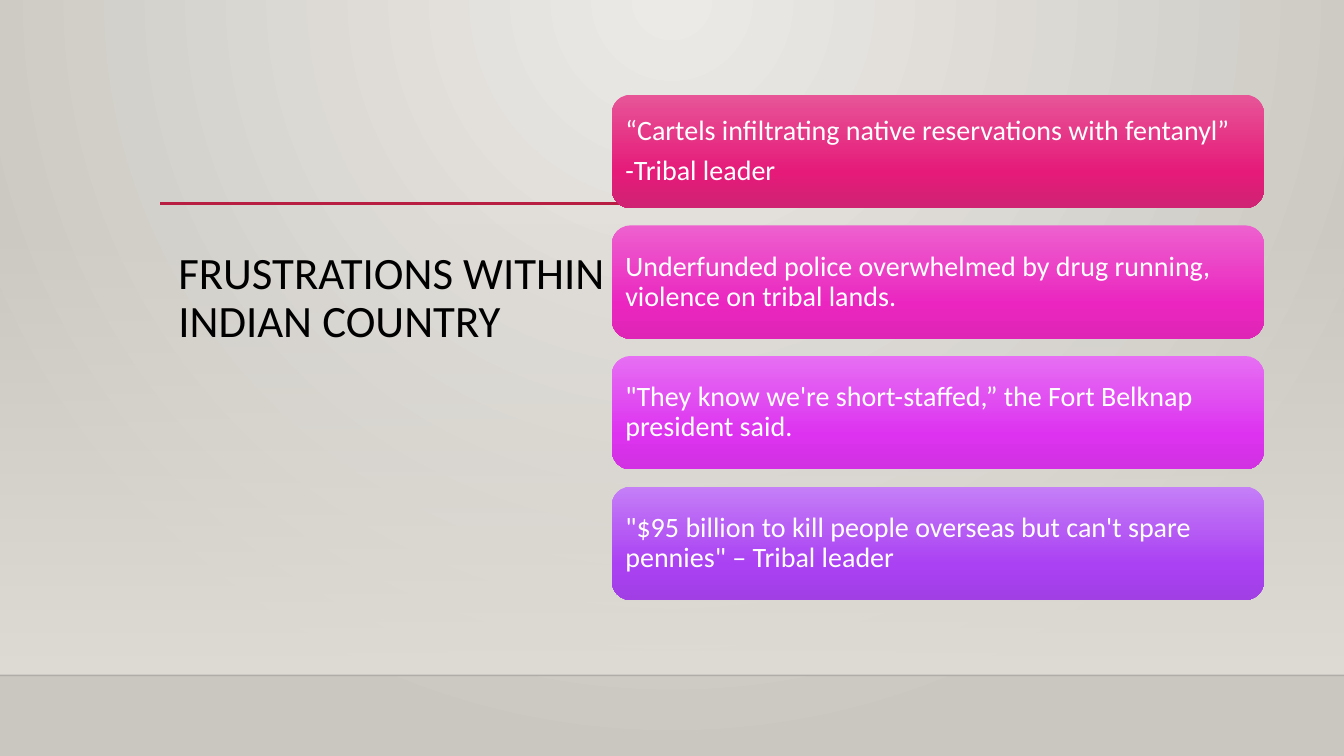
"""Build the slide on frustrations within Indian Country; lengths are percent of the slide."""
import dataclasses

import lxml.etree
import pptx
import pptx.dml.color
import pptx.dml.fill
import pptx.enum.shapes
import pptx.enum.text
import pptx.oxml
import pptx.oxml.ns
import pptx.shapes.autoshape
import pptx.slide
import pptx.text.text
import pptx.util

WIDE = pptx.util.Inches(13.33)
HIGH = pptx.util.Inches(7.5)
FONT = "Calibri"
LEFT, SPAN = 45.52, 48.53
TOP, TALL, STEP = 12.53, 15, 17.28
DOWN = '<a:lin ang="5400000" scaled="0"/>'
GLOW = '<a:path path="circle"><a:fillToRect l="43000" t="0" r="43000" b="100000"/></a:path>'


@dataclasses.dataclass(frozen=True)
class Stop:
    """One gradient stop."""
    place: int
    tint: str
    solid: int = 100


@dataclasses.dataclass(frozen=True)
class Card:
    """One rounded panel with its words and its three gradient tints."""
    lines: tuple[str, ...]
    tints: tuple[str, str, str]


@dataclasses.dataclass(frozen=True)
class Rule:
    """One level line across the slide."""
    start: float
    end: float
    row: float
    tint: str
    weight: float
    solid: int = 100


CARDS = (
    Card(("“Cartels infiltrating native reservations with fentanyl”", "-Tribal leader"),
         ("E75597", "E51A79", "CF2374")),
    Card(("Underfunded police overwhelmed by drug running, violence on tribal lands.",),
         ("ED61CE", "EB26C0", "DE25B6")),
    Card(("\"They know we're short-staffed,” the Fort Belknap president said.",),
         ("E66FF3", "DD33F0", "D131E2")),
    Card(("\"$95 billion to kill people overseas but can't spare pennies\" – Tribal leader",),
         ("C57FF7", "AA41F3", "A13FE5")),
)
RULES = (
    Rule(0, 100, 89.33, "000001", 1, 20),
    Rule(11.93, 90.75, 26.93, "B71E42", 2.5),
)


def across(share: float) -> int:
    """Turn a percentage of the width into a length."""
    return round(WIDE * share / 100)


def down(share: float) -> int:
    """Turn a percentage of the height into a length."""
    return round(HIGH * share / 100)


def box(left: float, top: float, width: float, height: float) -> tuple[int, int, int, int]:
    """Turn four shares into a place and size."""
    return across(left), down(top), across(width), down(height)


def color(tint: str) -> pptx.dml.color.RGBColor:
    """Turn a hex string into a colour."""
    return pptx.dml.color.RGBColor.from_string(tint)


def blend(fill: pptx.dml.fill.FillFormat, root: lxml.etree.ElementBase,
          stops: list[Stop], course: str = DOWN) -> None:
    """Give a fill the listed gradient stops."""
    fill.gradient()
    marks = "".join(
        f'<a:gs pos="{stop.place * 1000}"><a:srgbClr val="{stop.tint}">'
        f'<a:alpha val="{stop.solid * 1000}"/></a:srgbClr></a:gs>' for stop in stops)
    space = pptx.oxml.ns.nsdecls("a")
    fresh = pptx.oxml.parse_xml(
        f'<a:gradFill {space} rotWithShape="1"><a:gsLst>{marks}</a:gsLst>{course}</a:gradFill>')
    old = root.find(".//" + pptx.oxml.ns.qn("a:gradFill"))
    old.getparent().replace(old, fresh)


def panel(slide: pptx.slide.Slide, kind: pptx.enum.shapes.MSO_SHAPE,
          place: tuple[int, int, int, int], stops: list[Stop]) -> pptx.shapes.autoshape.Shape:
    """Draw a shape with a gradient and no outline."""
    shape = slide.shapes.add_shape(kind, *place)
    shape.shadow.inherit = False
    shape.line.fill.background()
    blend(shape.fill, shape.element, stops)
    return shape


def draw_rule(slide: pptx.slide.Slide, rule: Rule) -> None:
    """Draw one level line."""
    row = down(rule.row)
    line = slide.shapes.add_connector(
        pptx.enum.shapes.MSO_CONNECTOR.STRAIGHT, across(rule.start), row, across(rule.end), row)
    line.line.color.rgb = color(rule.tint)
    line.line.width = pptx.util.Pt(rule.weight)
    name = pptx.oxml.ns.qn
    tone = line.element.find(".//" + name("a:ln")).find(".//" + name("a:srgbClr"))
    lxml.etree.SubElement(tone, name("a:alpha")).set("val", str(rule.solid * 1000))
    lxml.etree.SubElement(line.element.spPr, name("a:effectLst"))


def style(para: pptx.text.text._Paragraph, size: int, tint: str) -> None:
    """Set the type of one paragraph."""
    para.alignment = pptx.enum.text.PP_ALIGN.LEFT
    para.line_spacing = 0.9
    para.font.name = FONT
    para.font.size = pptx.util.Pt(size)
    para.font.color.rgb = color(tint)


def draw_card(slide: pptx.slide.Slide, card: Card, index: int) -> None:
    """Draw one card in its row."""
    stops = [Stop(place, tint) for place, tint in zip((0, 69, 100), card.tints)]
    shape = panel(slide, pptx.enum.shapes.MSO_SHAPE.ROUNDED_RECTANGLE,
                  box(LEFT, TOP + index * STEP, SPAN, TALL), stops)
    frame = shape.text_frame
    frame.word_wrap = True
    frame.vertical_anchor = pptx.enum.text.MSO_ANCHOR.MIDDLE
    inset = pptx.util.Inches(0.08)
    frame.margin_left = frame.margin_right = inset
    frame.margin_top = frame.margin_bottom = inset
    frame.text = "\n".join(card.lines)
    for para in frame.paragraphs:
        style(para, 20, "FFFFFF")
        para.space_after = pptx.util.Pt(7)


def draw_title(slide: pptx.slide.Slide) -> None:
    """Write the title."""
    frame = slide.shapes.add_textbox(*box(12.53, 32.53, 34.28, 38.93)).text_frame
    frame.word_wrap = True
    frame.text = "FRUSTRATIONS WITHIN INDIAN COUNTRY"
    style(frame.paragraphs[0], 32, "000000")


def main() -> None:
    """Build and save the slide."""
    deck = pptx.Presentation()
    deck.slide_width, deck.slide_height = WIDE, HIGH
    slide = deck.slides.add_slide(deck.slide_layouts[6])
    blend(slide.background.fill, slide.element,
          [Stop(0, "ECEAE7"), Stop(100, "CAC7C1")], GLOW)
    panel(slide, pptx.enum.shapes.MSO_SHAPE.RECTANGLE, box(0, 29.47, 100, 59.87),
          [Stop(0, "DFDBD5", 0), Stop(100, "DFDBD5")])
    for rule in RULES:
        draw_rule(slide, rule)
    draw_title(slide)
    for index, card in enumerate(CARDS):
        draw_card(slide, card, index)
    deck.save("out.pptx")


if __name__ == "__main__":
    main()
